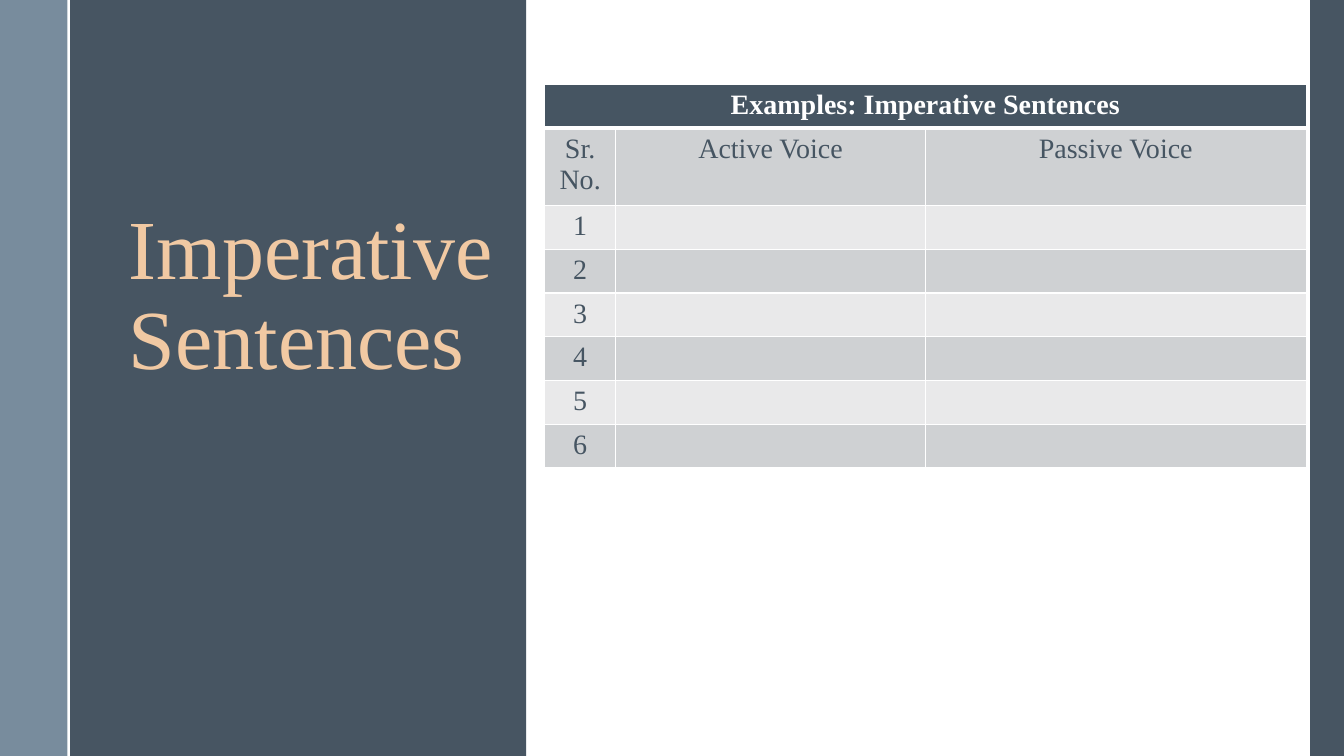
"""Build a slide with a title panel and a table of imperative sentences."""
from dataclasses import dataclass

from lxml.etree import SubElement
from pptx import Presentation
from pptx.dml.color import RGBColor
from pptx.enum.shapes import MSO_CONNECTOR, MSO_SHAPE
from pptx.enum.text import PP_ALIGN
from pptx.oxml import parse_xml
from pptx.oxml.ns import nsdecls, qn
from pptx.slide import Slide
from pptx.table import _Cell
from pptx.text.text import TextFrame
from pptx.util import Cm, Pt

PAGE_WIDTH, PAGE_HEIGHT = 33.87, 19.05
FONT = "Times New Roman"
WHITE, SLATE, INK, PEACH = "FFFFFF", "475562", "465562", "F1C9A3"
BANDS = ("CFD1D3", "E9E9EA")
COLUMN_WIDTHS = (1.8, 7.8, 9.6)
ROW_HEIGHT = 1.04
HEADINGS = ("Sr. No.", "Active Voice", "Passive Voice")
EXAMPLE_COUNT = 6


@dataclass
class Panel:
    """A full-height vertical band."""
    left: float
    width: float
    color: str
    opacity: int = 100


PANELS = (
    Panel(1.73, 11.53, SLATE),
    Panel(0, 1.7, "6A8093", opacity=90),
    Panel(33.02, 0.85, SLATE),
)


def rgb(color: str) -> RGBColor:
    """Turn a hex string into a colour."""
    return RGBColor.from_string(color)


def write_text(frame: TextFrame, text: str, *, size: float, color: str,
               bold: bool = False, align: PP_ALIGN = PP_ALIGN.LEFT,
               line_spacing: float = 1.0) -> None:
    """Fill a text frame with one formatted paragraph."""
    frame.word_wrap = True
    para = frame.paragraphs[0]
    para.alignment = align
    para.line_spacing = line_spacing
    span = para.add_run()
    span.text = text
    span.font.name = FONT
    span.font.size = Pt(size)
    span.font.bold = bold
    span.font.color.rgb = rgb(color)


def draw_panel(page: Slide, panel: Panel) -> None:
    """Draw one vertical band."""
    box = page.shapes.add_shape(MSO_SHAPE.RECTANGLE, Cm(panel.left), Cm(0),
                                Cm(panel.width), Cm(PAGE_HEIGHT))
    box.shadow.inherit = False
    box.line.fill.background()
    box.fill.solid()
    box.fill.fore_color.rgb = rgb(panel.color)
    if panel.opacity < 100:
        tint = box.fill._xPr.find(qn("a:solidFill"))[0]
        SubElement(tint, qn("a:alpha")).set("val", str(panel.opacity * 1000))


def draw_divider(page: Slide, left: float) -> None:
    """Draw the white vertical line beside the side band."""
    line = page.shapes.add_connector(MSO_CONNECTOR.STRAIGHT, Cm(left), Cm(0),
                                     Cm(left), Cm(PAGE_HEIGHT))
    line.line.color.rgb = rgb(WHITE)
    line.line.width = Pt(1.5)
    SubElement(line._element.spPr, qn("a:effectLst"))


def style_cell(cell: _Cell, fill: str, top: float = 1, bottom: float = 1) -> None:
    """Set the fill and the white borders of a cell."""
    cell.fill.solid()
    cell.fill.fore_color.rgb = rgb(fill)
    properties = cell._tc.get_or_add_tcPr()
    sides = {"lnL": 1, "lnR": 1, "lnT": top, "lnB": bottom}
    for index, (side, width) in enumerate(sides.items()):
        properties.insert(index, parse_xml(
            f'<a:{side} {nsdecls("a")} w="{Pt(width)}"><a:solidFill>'
            f'<a:srgbClr val="{WHITE}"/></a:solidFill></a:{side}>'))


def draw_table(page: Slide, left: float, top: float) -> None:
    """Draw the table with its title, headings and numbered rows."""
    numbers = [(str(number), "", "") for number in range(1, EXAMPLE_COUNT + 1)]
    body = [HEADINGS, *numbers]
    row_count = len(body) + 1
    table = page.shapes.add_table(
        row_count, len(COLUMN_WIDTHS), Cm(left), Cm(top),
        Cm(sum(COLUMN_WIDTHS)), Cm(ROW_HEIGHT * row_count)).table
    table.horz_banding = False
    for column, width in zip(table.columns, COLUMN_WIDTHS):
        column.width = Cm(width)
    for row in table.rows:
        row.height = Cm(ROW_HEIGHT)

    title = table.cell(0, 0)
    title.merge(table.cell(0, len(COLUMN_WIDTHS) - 1))
    for cell in table.rows[0].cells:
        style_cell(cell, INK, bottom=3)
    write_text(title.text_frame, "Examples: Imperative Sentences", size=20,
               color=WHITE, bold=True, align=PP_ALIGN.CENTER)

    for index, texts in enumerate(body):
        for column, text in enumerate(texts):
            cell = table.cell(index + 1, column)
            style_cell(cell, BANDS[index % 2], top=3 if index == 0 else 1)
            if text:
                write_text(cell.text_frame, text, size=20, color=INK,
                           align=PP_ALIGN.CENTER)


def main() -> None:
    """Create and save the deck."""
    deck = Presentation()
    deck.slide_width, deck.slide_height = Cm(PAGE_WIDTH), Cm(PAGE_HEIGHT)
    page = deck.slides.add_slide(deck.slide_layouts[6])
    for panel in PANELS:
        draw_panel(page, panel)
    draw_divider(page, 1.73)
    box = page.shapes.add_textbox(Cm(3), Cm(5.08), Cm(9.75), Cm(12.07))
    write_text(box.text_frame, "Imperative Sentences", size=60, color=PEACH,
               line_spacing=0.9)
    draw_table(page, 13.72, 2.13)
    deck.save("out.pptx")


if __name__ == "__main__":
    main()
